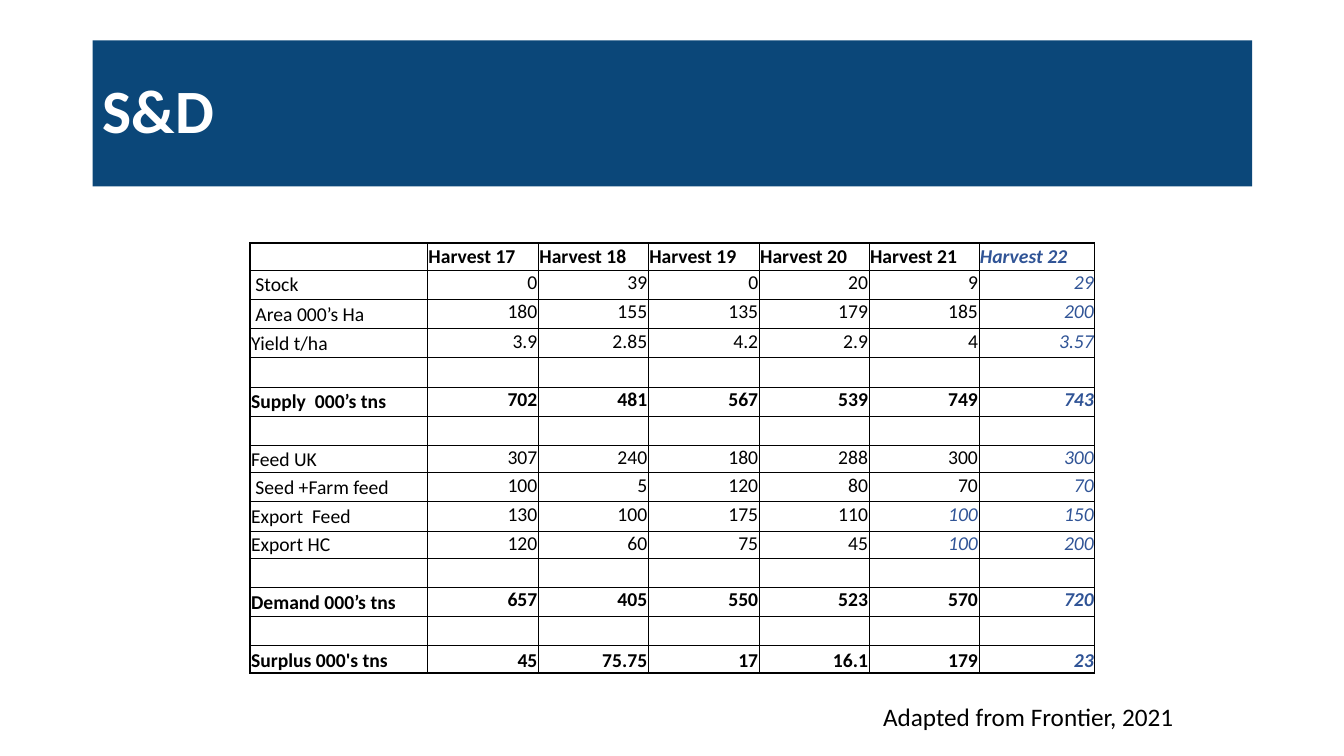
from lxml.etree import SubElement as Sub
from pptx import Presentation
from pptx.dml.color import RGBColor as RGB
from pptx.enum.shapes import MSO_SHAPE as Shape
from pptx.enum.text import MSO_ANCHOR as Anchor, PP_ALIGN as Align
from pptx.oxml.ns import qn
from pptx.util import Inches, Pt

COLORS = {"band": "0B4779", "white": "FFFFFF", "black": "000000", "blue": "305496"}
FONT = "Calibri"

HEAD = ["", *(f"Harvest {year}" for year in range(17, 23))]
ROWS = [
    HEAD,
    [" Stock", "0", "39", "0", "20", "9", "29"],
    [" Area 000’s Ha", "180", "155", "135", "179", "185", "200"],
    ["Yield t/ha", "3.9", "2.85", "4.2", "2.9", "4", "3.57"],
    [""] * 7,
    ["Supply  000’s tns", "702", "481", "567", "539", "749", "743"],
    [""] * 7,
    ["Feed UK", "307", "240", "180", "288", "300", "300"],
    [" Seed +Farm feed ", "100", "5", "120", "80", "70", "70"],
    ["Export  Feed", "130", "100", "175", "110", "100", "150"],
    ["Export HC", "120", "60", "75", "45", "100", "200"],
    [""] * 7,
    ["Demand 000’s tns", "657", "405", "550", "523", "570", "720"],
    [""] * 7,
    ["Surplus 000's tns", "45", "75.75", "17", "16.1", "179", "23"],
]
WIDTHS = [1.76, 1.1, 1.09, 1.1, 1.09, 1.09, 1.15]
LOW_ROWS = {0, 7, 10, 14}
BOLD_ROWS = {0, 5, 12, 14}
LAST_ROW, LAST_COL = len(ROWS) - 1, len(WIDTHS) - 1


def style(run, size, color, bold=False, italic=False):
    font = run.font
    font.name, font.size = FONT, Pt(size)
    font.bold, font.italic = bold, italic
    font.color.rgb = RGB.from_string(COLORS[color])


def add_band(slide, x, y, w, h):
    band = slide.shapes.add_shape(Shape.RECTANGLE, Inches(x), Inches(y), Inches(w), Inches(h))
    band.shadow.inherit = False
    band.fill.solid()
    band.fill.fore_color.rgb = RGB.from_string(COLORS["band"])
    band.line.fill.background()


def add_text(slide, text, x, y, w, h, size, color, bold=False, anchor=Anchor.TOP, space=1.0):
    frame = slide.shapes.add_textbox(Inches(x), Inches(y), Inches(w), Inches(h)).text_frame
    frame.word_wrap = True
    frame.vertical_anchor = anchor
    frame.text = text
    frame.paragraphs[0].line_spacing = space
    style(frame.paragraphs[0].runs[0], size, color, bold)


def set_border(cell, row, col):
    outer = {"L": col == 0, "R": col == LAST_COL, "T": row == 0, "B": row == LAST_ROW}
    props = cell._tc.get_or_add_tcPr()
    for side, edge in outer.items():
        line = Sub(props, qn(f"a:ln{side}"), w=str(Pt(1 if edge else 0.5)))
        fill = Sub(line, qn("a:solidFill"))
        Sub(fill, qn("a:srgbClr"), val=COLORS["black"])


def fill_cell(cell, text, row, col):
    cell.margin_left = cell.margin_right = cell.margin_top = Inches(0.01)
    cell.margin_bottom = 0
    set_border(cell, row, col)
    cell.fill.background()

    # Labels sit in the middle, values on top, the surplus row at the bottom
    if row == LAST_ROW:
        cell.vertical_anchor = Anchor.BOTTOM
    else:
        cell.vertical_anchor = Anchor.MIDDLE if row == 0 or col == 0 else Anchor.TOP

    cell.text = text
    para = cell.text_frame.paragraphs[0]
    para.alignment = Align.RIGHT if row and col else Align.LEFT
    if not text:
        # Keep empty rows as low as filled ones
        Sub(para._p, qn("a:endParaRPr"), sz="1400")
        return

    # Forecasts are blue and italic
    export = ROWS[row][0].startswith("Export")
    guess = col == LAST_COL or (export and col == LAST_COL - 1)
    style(para.runs[0], 14, "blue" if guess else "black", row in BOLD_ROWS, guess)


def add_balance(slide, x, y):
    heights = [0.27 if row in LOW_ROWS else 0.29 for row in range(len(ROWS))]
    table = slide.shapes.add_table(len(ROWS), len(WIDTHS), Inches(x), Inches(y),
                                   Inches(sum(WIDTHS)), Inches(sum(heights))).table
    table.first_row = table.horz_banding = False
    for col, width in enumerate(WIDTHS):
        table.columns[col].width = Inches(width)
    for row, height in enumerate(heights):
        table.rows[row].height = Inches(height)
        for col, text in enumerate(ROWS[row]):
            fill_cell(table.cell(row, col), text, row, col)


def main():
    deck = Presentation()
    deck.slide_width, deck.slide_height = Inches(13.33), Inches(7.5)
    slide = deck.slides.add_slide(deck.slide_layouts[6])

    # Title band
    add_band(slide, 0.92, 0.4, 11.5, 1.45)
    add_text(slide, "S&D", 0.92, 0.4, 8.03, 1.45, 44, "white", True, Anchor.MIDDLE, 0.9)

    # Supply and demand table
    add_balance(slide, 2.48, 2.41)

    # Citation
    add_text(slide, "Adapted from Frontier, 2021", 8.66, 6.91, 3.75, 0.4, 18, "black")

    deck.save("out.pptx")


if __name__ == "__main__":
    main()
